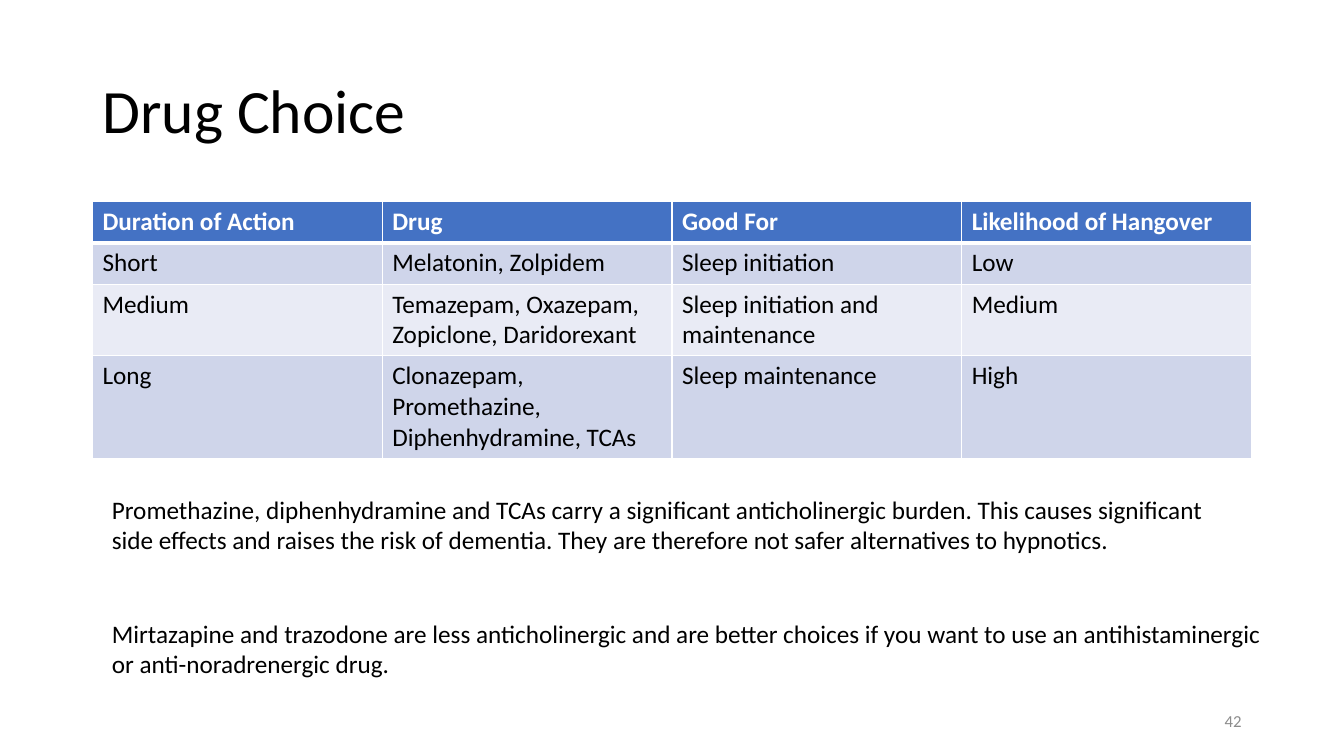
from dataclasses import dataclass

from lxml.etree import SubElement
from pptx import Presentation
from pptx.dml.color import RGBColor
from pptx.enum.text import MSO_ANCHOR as Anchor, PP_ALIGN as Align
from pptx.oxml.ns import qn
from pptx.util import Cm, Pt


@dataclass(frozen=True)
class Theme:
    font: str = "Calibri"
    ink: str = "000000"
    white: str = "FFFFFF"
    muted: str = "8C8C8C"
    header: str = "4472C4"
    bands: tuple = ("CFD5EA", "E9EBF5")
    title_size: int = 44
    body_size: int = 18
    number_size: int = 12
    rule: int = 1
    header_rule: int = 3


THEME = Theme()

DRUG_ROWS = [
    ["Duration of Action", "Drug", "Good For", "Likelihood of Hangover"],
    ["Short", "Melatonin, Zolpidem", "Sleep initiation", "Low"],
    ["Medium", "Temazepam, Oxazepam, Zopiclone, Daridorexant",
     "Sleep initiation and maintenance", "Medium"],
    ["Long", "Clonazepam, Promethazine, Diphenhydramine, TCAs",
     "Sleep maintenance", "High"],
]
ROW_HEIGHTS = [1.04, 1.04, 1.8, 2.58]

BURDEN_NOTE = (
    "Promethazine, diphenhydramine and TCAs carry a significant anticholinergic "
    "burden. This causes significant side effects and raises the risk of dementia. "
    "They are therefore not safer alternatives to hypnotics."
)
ALTERNATIVE_NOTE = (
    "Mirtazapine and trazodone are less anticholinergic and are better choices if "
    "you want to use an antihistaminergic or anti-noradrenergic drug."
)


def apply_format(target, values):
    for name, value in values.items():
        setattr(target, name, value)


def write_text(frame, text, size, color, bold=False, **paragraph_format):
    frame.text = text
    frame.word_wrap = True
    paragraph = frame.paragraphs[0]
    apply_format(paragraph, {"alignment": Align.LEFT, **paragraph_format})
    font = paragraph.runs[0].font
    apply_format(font, {"name": THEME.font, "size": Pt(size), "bold": bold})
    font.color.rgb = RGBColor.from_string(color)


def add_title(slide, box, text):
    title = slide.shapes.title
    apply_format(title, dict(zip(("left", "top", "width", "height"), box)))
    write_text(title.text_frame, text, THEME.title_size, THEME.ink, line_spacing=0.9)
    title.text_frame.vertical_anchor = Anchor.MIDDLE


def add_borders(cell, top, bottom):
    properties = cell._tc.get_or_add_tcPr()
    widths = {"lnL": THEME.rule, "lnR": THEME.rule, "lnT": top, "lnB": bottom}
    for side, width in widths.items():
        line = SubElement(properties, qn(f"a:{side}"), w=str(Pt(width)))
        fill = SubElement(line, qn("a:solidFill"))
        SubElement(fill, qn("a:srgbClr"), val=THEME.white)


def add_drug_table(slide, box, rows, heights):
    left, top, width, height = box
    column_count = len(rows[0])
    table = slide.shapes.add_table(len(rows), column_count, *box).table
    for column in table.columns:
        column.width = width // column_count
    for row_index, (texts, row_height) in enumerate(zip(rows, heights)):
        table.rows[row_index].height = Cm(row_height)
        is_header = row_index == 0
        background = THEME.header if is_header else THEME.bands[(row_index - 1) % 2]
        color = THEME.white if is_header else THEME.ink
        for column_index, text in enumerate(texts):
            cell = table.cell(row_index, column_index)
            add_borders(
                cell,
                top=THEME.header_rule if row_index == 1 else THEME.rule,
                bottom=THEME.header_rule if is_header else THEME.rule,
            )
            cell.fill.solid()
            cell.fill.fore_color.rgb = RGBColor.from_string(background)
            write_text(cell.text_frame, text, THEME.body_size, color, bold=is_header)


def add_note(slide, box, text):
    note = slide.shapes.add_textbox(*box)
    write_text(note.text_frame, text, THEME.body_size, THEME.ink)


def add_page_number(slide, box, number):
    page_number = slide.shapes.add_textbox(*box)
    write_text(page_number.text_frame, number, THEME.number_size, THEME.muted,
               alignment=Align.RIGHT)
    page_number.text_frame.vertical_anchor = Anchor.MIDDLE


def build_drug_choice_slide(presentation):
    slide = presentation.slides.add_slide(presentation.slide_layouts[5])
    left, width = Cm(2.33), Cm(29.21)
    note_left = left + Cm(0.24)

    # Title
    add_title(slide, (left, Cm(1.01), width, Cm(3.68)), "Drug Choice")

    # Comparison of drugs by duration of action
    table_box = (left, Cm(5.08), width, Cm(sum(ROW_HEIGHTS)))
    add_drug_table(slide, table_box, DRUG_ROWS, ROW_HEIGHTS)

    # Notes on the anticholinergic burden
    add_note(slide, (note_left, Cm(12.32), Cm(28.98), Cm(2.56)), BURDEN_NOTE)
    add_note(slide, (note_left, Cm(15.45), Cm(29.75), Cm(1.8)), ALTERNATIVE_NOTE)

    # Page number, flush with the right edge of the table
    number_width = Cm(7.62)
    number_left = left + width - number_width
    add_page_number(slide, (number_left, Cm(17.65), number_width, Cm(1.01)), "42")


def main():
    presentation = Presentation()
    presentation.slide_width, presentation.slide_height = Cm(33.87), Cm(19.05)
    build_drug_choice_slide(presentation)
    presentation.save("out.pptx")


if __name__ == "__main__":
    main()
